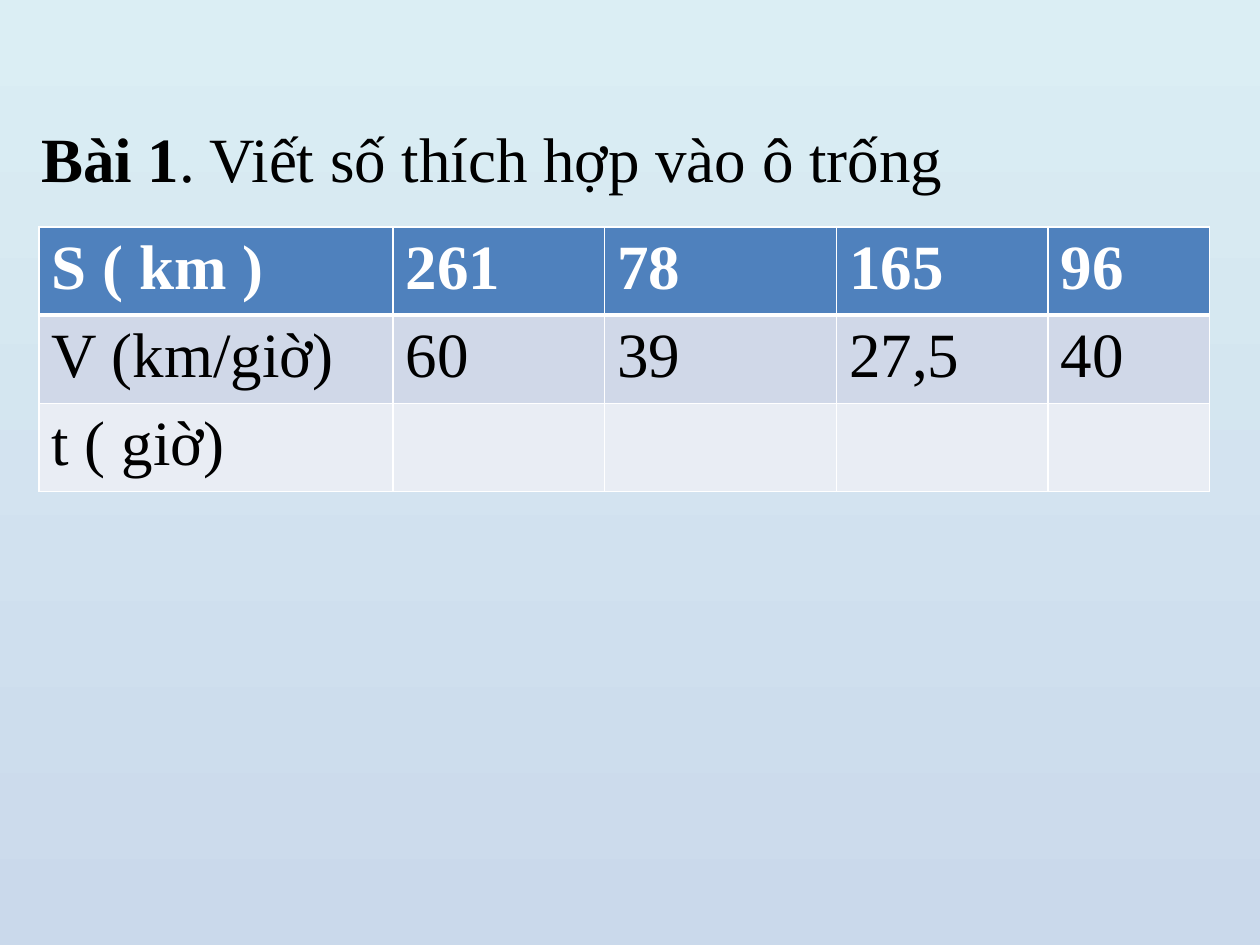
from dataclasses import dataclass

import pptx
import pptx.dml.color
import pptx.oxml
import pptx.oxml.ns
import pptx.util

SLIDE_WIDTH = pptx.util.Inches(10)
SLIDE_HEIGHT = pptx.util.Inches(7.5)
FONT_NAME = "Times New Roman"
FONT_SIZE = pptx.util.Pt(36)
COLUMN_WEIGHTS = (2.81, 1.68, 1.84, 1.68, 1.28)


@dataclass(frozen=True)
class TableRow:
    texts: tuple[str, ...]
    fill: str
    color: str = "000000"
    bold: bool = False
    top_border: float = 1
    bottom_border: float = 1


ROWS = (
    TableRow(("S ( km )", "261", "78", "165", "96"), "4F81BD", "FFFFFF", True, bottom_border=3),
    TableRow(("V (km/giờ)", "60", "39", "27,5", "40"), "D0D8E8", top_border=3),
    TableRow(("t ( giờ)", "", "", "", ""), "E9EDF4"),
)


def rgb(value: str) -> pptx.dml.color.RGBColor:
    return pptx.dml.color.RGBColor.from_string(value)


def across(share: float) -> int:
    return round(SLIDE_WIDTH * share)


def down(share: float) -> int:
    return round(SLIDE_HEIGHT * share)


def style_font(font, color: str) -> None:
    font.name = FONT_NAME
    font.size = FONT_SIZE
    font.color.rgb = rgb(color)


def paint_background(slide, top_color: str, bottom_color: str) -> None:
    fill = slide.background.fill
    fill.gradient()
    fill.gradient_angle = 270
    for stop, color, position in zip(fill.gradient_stops, (top_color, bottom_color), (0, 1)):
        stop.color.rgb = rgb(color)
        stop.position = position


def add_heading(slide, label: str, sentence: str) -> None:
    shape = slide.shapes.add_textbox(across(0.023), down(0.03), across(0.977), down(0.23))
    frame = shape.text_frame
    frame.word_wrap = True
    frame.margin_top = down(0.097)
    paragraph = frame.paragraphs[0]
    style_font(paragraph.font, "000000")
    for text, bold in ((label, True), (sentence, False)):
        run = paragraph.add_run()
        run.text = text
        run.font.bold = bold


def set_border(cell, side: str, width: float) -> None:
    properties = cell._tc.get_or_add_tcPr()
    line = pptx.oxml.parse_xml(
        f'<a:{side} {pptx.oxml.ns.nsdecls("a")} w="{pptx.util.Pt(width)}">'
        '<a:solidFill><a:srgbClr val="FFFFFF"/></a:solidFill>'
        f"</a:{side}>"
    )
    properties.append(line)


def fill_cell(cell, text: str, row: TableRow) -> None:
    borders = {"lnL": 1, "lnR": 1, "lnT": row.top_border, "lnB": row.bottom_border}
    for side, width in borders.items():
        set_border(cell, side, width)
    cell.fill.solid()
    cell.fill.fore_color.rgb = rgb(row.fill)
    if text:
        cell.text = text
        paragraph = cell.text_frame.paragraphs[0]
        style_font(paragraph.font, row.color)
        paragraph.font.bold = row.bold


def add_speed_table(slide) -> None:
    width = across(0.929)
    frame = slide.shapes.add_table(
        len(ROWS), len(COLUMN_WEIGHTS), across(0.031), down(0.24), width, down(0.28)
    )
    table = frame.table
    for column, weight in zip(table.columns, COLUMN_WEIGHTS):
        column.width = round(width * weight / sum(COLUMN_WEIGHTS))
    for row_index, row in enumerate(ROWS):
        for column_index, text in enumerate(row.texts):
            fill_cell(table.cell(row_index, column_index), text, row)


def main() -> None:
    presentation = pptx.Presentation()
    presentation.slide_width = SLIDE_WIDTH
    presentation.slide_height = SLIDE_HEIGHT
    slide = presentation.slides.add_slide(presentation.slide_layouts[6])
    paint_background(slide, "DBEEF4", "CAD9EB")
    add_heading(slide, "Bài 1", ". Viết số thích hợp vào ô trống")
    add_speed_table(slide)
    presentation.save("out.pptx")


if __name__ == "__main__":
    main()
